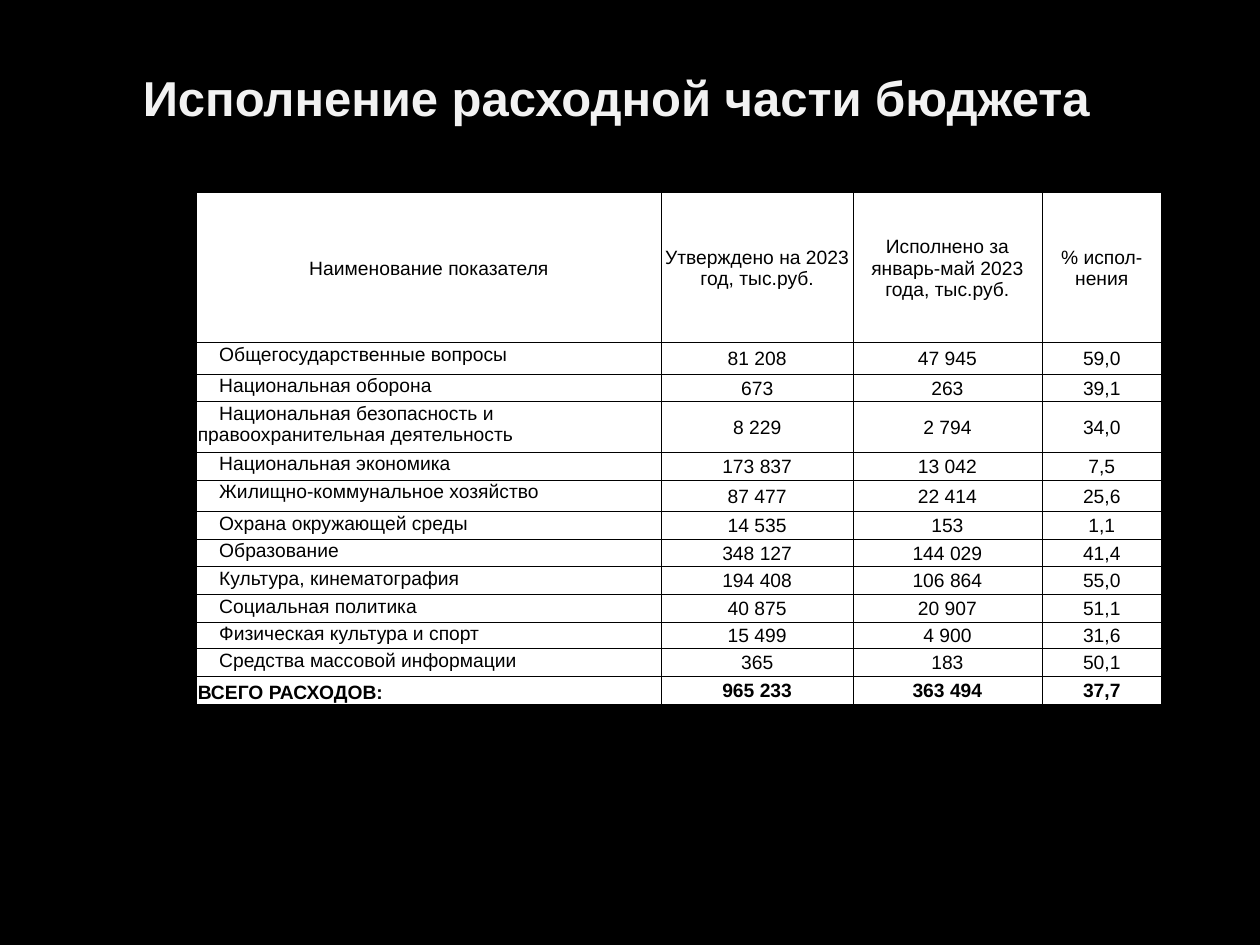
from dataclasses import dataclass
from typing import NamedTuple

from lxml import etree
from pptx import Presentation, util as u
from pptx.dml.color import RGBColor
from pptx.enum import text
from pptx.oxml import ns


@dataclass(frozen=True)
class Theme:
    font: str = "Arial"
    back: str = "000000"
    head: str = "F2F2F2"
    ink: str = "000000"
    fill: str = "FFFFFF"
    rule: float = 0.5
    big: int = 28
    small: int = 11


class Row(NamedTuple):
    name: str
    plan: str
    done: str
    rate: str
    high: float = 0.22


LOOK = Theme()
COLS = (3.69, 1.52, 1.5, 0.95)
ROWS = (
    Row("Наименование показателя", "Утверждено на 2023 год, тыс.руб.",
        "Исполнено за январь-май 2023 года, тыс.руб.", "% испол-нения", 1.19),
    Row("Общегосударственные вопросы", "81 208", "47 945", "59,0", 0.25),
    Row("Национальная оборона", "673", "263", "39,1"),
    Row("Национальная безопасность и правоохранительная деятельность",
        "8 229", "2 794", "34,0", 0.4),
    Row("Национальная экономика", "173 837", "13 042", "7,5"),
    Row("Жилищно-коммунальное хозяйство", "87 477", "22 414", "25,6", 0.25),
    Row("Охрана окружающей среды", "14 535", "153", "1,1"),
    Row("Образование", "348 127", "144 029", "41,4"),
    Row("Культура, кинематография", "194 408", "106 864", "55,0"),
    Row("Социальная политика", "40 875", "20 907", "51,1"),
    Row("Физическая культура и спорт", "15 499", "4 900", "31,6", 0.21),
    Row("Средства массовой информации", "365", "183", "50,1"),
    Row("ВСЕГО РАСХОДОВ:", "965 233", "363 494", "37,7"),
)


def style(para, size: int, tint: str, bold: bool) -> None:
    for run in para.runs:
        font = run.font
        font.name, font.size, font.bold = LOOK.font, u.Pt(size), bold
        font.color.rgb = RGBColor.from_string(tint)


def border(cell) -> None:
    props = cell._tc.get_or_add_tcPr()
    for side in ("L", "R", "T", "B"):
        line = etree.SubElement(props, ns.qn(f"a:ln{side}"), w=str(u.Pt(LOOK.rule)))
        fill = etree.SubElement(line, ns.qn("a:solidFill"))
        etree.SubElement(fill, ns.qn("a:srgbClr"), val=LOOK.ink)


def paint(cell, words: str, bold: bool) -> None:
    border(cell)
    cell.fill.solid()
    cell.fill.fore_color.rgb = RGBColor.from_string(LOOK.fill)
    cell.margin_left = cell.margin_right = cell.margin_top = u.Inches(0.01)
    cell.margin_bottom = 0
    cell.vertical_anchor = text.MSO_ANCHOR.MIDDLE
    para = cell.text_frame.paragraphs[0]
    para.text = words
    para.alignment = text.PP_ALIGN.CENTER
    style(para, LOOK.small, LOOK.ink, bold)


def label(cell, total: bool) -> None:
    """Left-align a row name: the total sits low, the others are indented."""
    para = cell.text_frame.paragraphs[0]
    para.alignment = text.PP_ALIGN.LEFT
    if total:
        cell.vertical_anchor = text.MSO_ANCHOR.BOTTOM
    else:
        cell.vertical_anchor = text.MSO_ANCHOR.TOP
        para._p.get_or_add_pPr().set("indent", str(u.Inches(0.17)))


def add_title(slide, words: str) -> None:
    title = slide.shapes.title
    title.left, title.top = u.Inches(0.5), u.Inches(0.29)
    title.width, title.height = u.Inches(9), u.Inches(0.96)
    frame = title.text_frame
    frame.text = words
    frame.word_wrap = True
    frame.margin_right = u.Inches(0.32)
    frame.vertical_anchor = text.MSO_ANCHOR.MIDDLE
    para = frame.paragraphs[0]
    para.alignment = text.PP_ALIGN.CENTER
    style(para, LOOK.big, LOOK.head, True)


def add_budget(slide) -> None:
    high = sum(row.high for row in ROWS)
    table = slide.shapes.add_table(
        len(ROWS), len(COLS), u.Inches(1.56), u.Inches(1.53),
        u.Inches(sum(COLS)), u.Inches(high)).table
    table.first_row = table.horz_banding = False
    for col, wide in zip(table.columns, COLS):
        col.width = u.Inches(wide)
    last = len(ROWS) - 1
    for i, row in enumerate(ROWS):
        table.rows[i].height = u.Inches(row.high)
        for j, words in enumerate(row[:len(COLS)]):
            paint(table.cell(i, j), words, i == last)
        if i:
            label(table.cell(i, 0), i == last)


def main() -> None:
    deck = Presentation()
    deck.slide_width, deck.slide_height = u.Inches(10), u.Inches(7.5)
    slide = deck.slides.add_slide(deck.slide_layouts[5])
    slide.background.fill.solid()
    slide.background.fill.fore_color.rgb = RGBColor.from_string(LOOK.back)
    add_title(slide, "Исполнение расходной части бюджета")
    add_budget(slide)
    deck.save("out.pptx")


if __name__ == "__main__":
    main()
